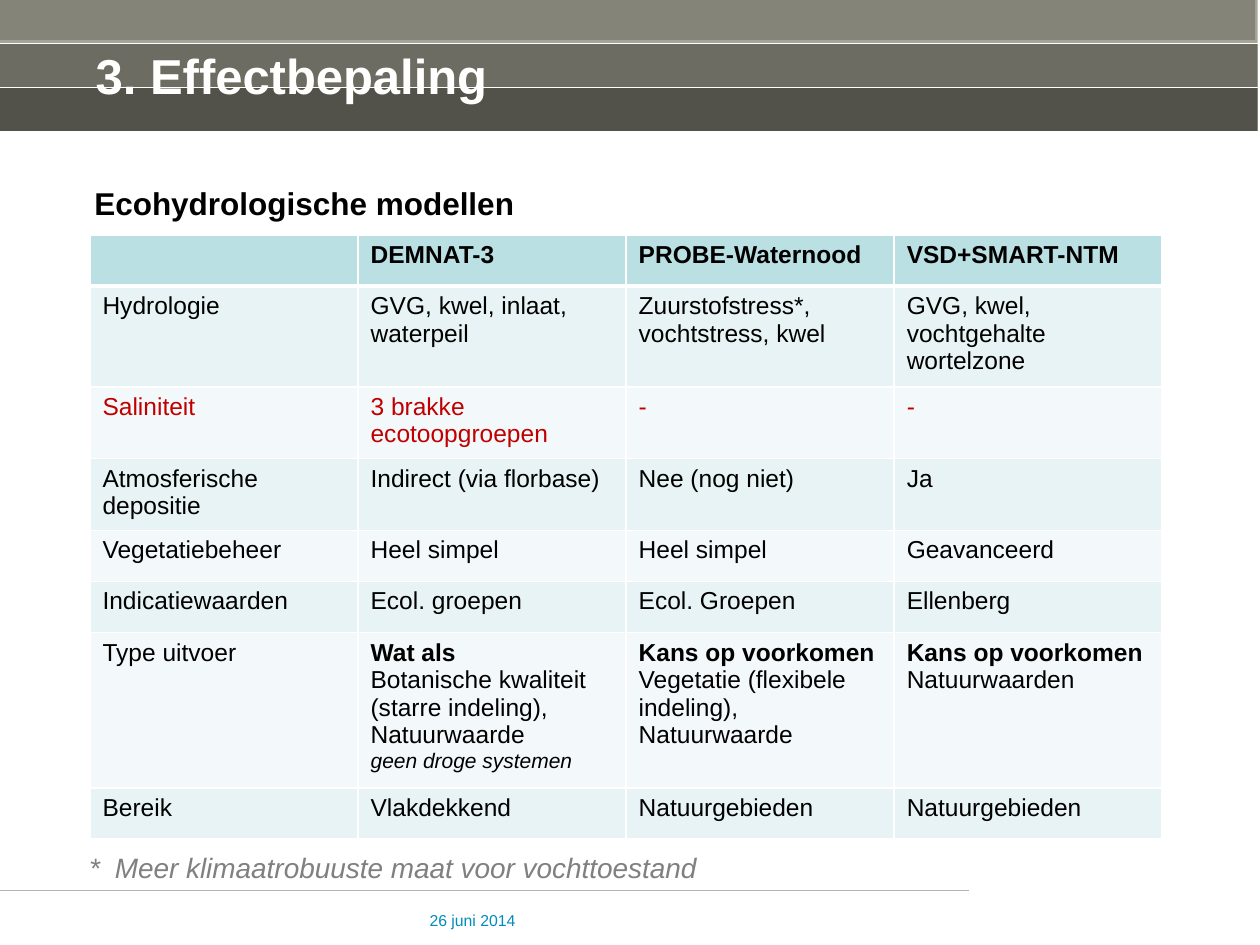
"""Builds the slide comparing ecohydrological models."""
from lxml import etree
from pptx import Presentation
from pptx import util as u
from pptx.dml.color import RGBColor
from pptx.enum import shapes, text
from pptx.oxml.ns import qn

WHITE = RGBColor(0xFF, 0xFF, 0xFF)
BLACK = RGBColor(0, 0, 0)
TITLE_WHITE = RGBColor(0xFF, 0xFF, 0xFE)
BANNER = RGBColor(0xA6, 0xA6, 0x98)
RULE_GREY = RGBColor(0xB2, 0xB2, 0xB2)
NOTE_GREY = RGBColor(0x80, 0x80, 0x80)
DATE_BLUE = RGBColor(0x00, 0x8B, 0xBF)
RED = RGBColor(0xC0, 0, 0)
HEADER_FILL = RGBColor(0xBB, 0xE0, 0xE3)
ROW_FILLS = [RGBColor(0xF3, 0xF9, 0xFA), RGBColor(0xE7, 0xF3, 0xF4)]

MODELS = [
    ("", "DEMNAT-3", "PROBE-Waternood", "VSD+SMART-NTM"),
    ("Hydrologie", "GVG, kwel, inlaat, waterpeil",
     "Zuurstofstress*, vochtstress, kwel", "GVG, kwel, vochtgehalte wortelzone"),
    ("Saliniteit", "3 brakke\necotoopgroepen", "-", "-"),
    ("Atmosferische depositie", "Indirect (via florbase)", "Nee (nog niet)", "Ja"),
    ("Vegetatiebeheer", "Heel simpel", "Heel simpel", "Geavanceerd"),
    ("Indicatiewaarden", "Ecol. groepen", "Ecol. Groepen", "Ellenberg"),
    ("Type uitvoer",
     "Wat als\nBotanische kwaliteit (starre indeling),\nNatuurwaarde\ngeen droge systemen",
     "Kans op voorkomen\nVegetatie (flexibele indeling),\nNatuurwaarde",
     "Kans op voorkomen\nNatuurwaarden"),
    ("Bereik", "Vlakdekkend", "Natuurgebieden", "Natuurgebieden"),
]
ROW_HEIGHTS = [29.2, 57.6, 41, 41, 29.2, 29.2, 88.8, 29.2]
BOLD_LINES = {"Wat als", "Kans op voorkomen"}
ITALIC_LINES = {"geen droge systemen"}
RED_ROW = 2
COLUMN_WIDTH = 153.2

BANNER_WIDTH = 718.6
BAND = 25
BANNER_PARTS = [
    (0, 0, 3 * BAND, BANNER, None),
    (-1.4, -2.2, BAND, BLACK, 20),
    (0, BAND, BAND, BLACK, 35),
    (0, 2 * BAND, BAND, BLACK, 50),
]
RULES = [(BANNER_WIDTH, n * BAND, WHITE) for n in (1, 2, 3)] + [(553.7, 509, RULE_GREY)]


def style(paragraph, size, color, bold=False, italic=False):
    for run in paragraph.runs:
        font = run.font
        font.name, font.size = "Arial", u.Pt(size)
        font.bold, font.italic = bold, italic
        font.color.rgb = color


def add_text(slide, box, words, size, color, bold=False, italic=False,
             insets=(7.2, 3.6), anchor=text.MSO_ANCHOR.TOP):
    frame = slide.shapes.add_textbox(*map(u.Pt, box)).text_frame
    frame.word_wrap = True
    frame.vertical_anchor = anchor
    frame.margin_left = frame.margin_right = u.Pt(insets[0])
    frame.margin_top = frame.margin_bottom = u.Pt(insets[1])
    frame.text = words
    style(frame.paragraphs[0], size, color, bold, italic)
    return frame


def add_banner_part(slide, left, top, height, color, opacity):
    part = slide.shapes.add_shape(shapes.MSO_SHAPE.RECTANGLE,
                                  *map(u.Pt, (left, top, BANNER_WIDTH, height)))
    part.shadow.inherit = False
    part.line.fill.background()
    part.fill.solid()
    part.fill.fore_color.rgb = color
    if opacity:
        tint = part.fill._xPr.find(".//" + qn("a:srgbClr"))
        etree.SubElement(tint, qn("a:alpha"), val=str(opacity * 1000))


def add_rule(slide, right, top, color):
    rule = slide.shapes.add_connector(shapes.MSO_CONNECTOR.STRAIGHT,
                                      u.Pt(0), u.Pt(top), u.Pt(right), u.Pt(top))
    rule.line.color.rgb = color
    rule.line.width = u.Pt(0.75)
    etree.SubElement(rule._element.spPr, qn("a:effectLst"))


def add_borders(cell, widths):
    properties = cell._tc.get_or_add_tcPr()
    for side, width in widths.items():
        border = etree.SubElement(properties, qn("a:ln" + side), w=str(u.Pt(width)))
        fill = etree.SubElement(border, qn("a:solidFill"))
        etree.SubElement(fill, qn("a:srgbClr"), val=str(WHITE))


def add_models_table(slide):
    columns = len(MODELS[0])
    box = (51.4, 134.2, columns * COLUMN_WIDTH, sum(ROW_HEIGHTS))
    table = slide.shapes.add_table(len(MODELS), columns, *map(u.Pt, box)).table
    for column in table.columns:
        column.width = u.Pt(COLUMN_WIDTH)
    for r, (entries, height) in enumerate(zip(MODELS, ROW_HEIGHTS)):
        table.rows[r].height = u.Pt(height)
        for c, entry in enumerate(entries):
            cell = table.cell(r, c)
            add_borders(cell, {"L": 1, "R": 1, "T": 3 if r == 1 else 1, "B": 3 if r == 0 else 1})
            cell.fill.solid()
            cell.fill.fore_color.rgb = ROW_FILLS[r % 2] if r else HEADER_FILL
            cell.text_frame.text = entry
            for paragraph in cell.text_frame.paragraphs:
                line = paragraph.text
                italic = line in ITALIC_LINES
                style(paragraph, 12 if italic else 14, RED if r == RED_ROW else BLACK,
                      r == 0 or line in BOLD_LINES, italic)


def main():
    deck = Presentation()
    deck.slide_width, deck.slide_height = u.Pt(720), u.Pt(540)
    slide = deck.slides.add_slide(deck.slide_layouts[6])
    for part in BANNER_PARTS:
        add_banner_part(slide, *part)
    for rule in RULES:
        add_rule(slide, *rule)
    add_text(slide, (245.5, 520.6, 113, 25.2), "26 juni 2014", 9, DATE_BLUE, insets=(0, 0))
    add_text(slide, (54.7, 18.7, 617, 48.2), "3. Effectbepaling", 28, TITLE_WHITE, bold=True,
             insets=(0, 3.6), anchor=text.MSO_ANCHOR.MIDDLE)
    add_text(slide, (46.8, 101.5, 594, 29), "Ecohydrologische modellen", 18, BLACK, bold=True)
    add_models_table(slide)
    footnote = add_text(slide, (43.9, 482.4, 594, 26.6),
                        "*\tMeer klimaatrobuuste maat voor vochttoestand",
                        16, NOTE_GREY, italic=True)
    tabs = etree.SubElement(footnote.paragraphs[0]._p.get_or_add_pPr(), qn("a:tabLst"))
    etree.SubElement(tabs, qn("a:tab"), pos=str(u.Pt(14.6)), algn="l")
    deck.save("out.pptx")


if __name__ == "__main__":
    main()
